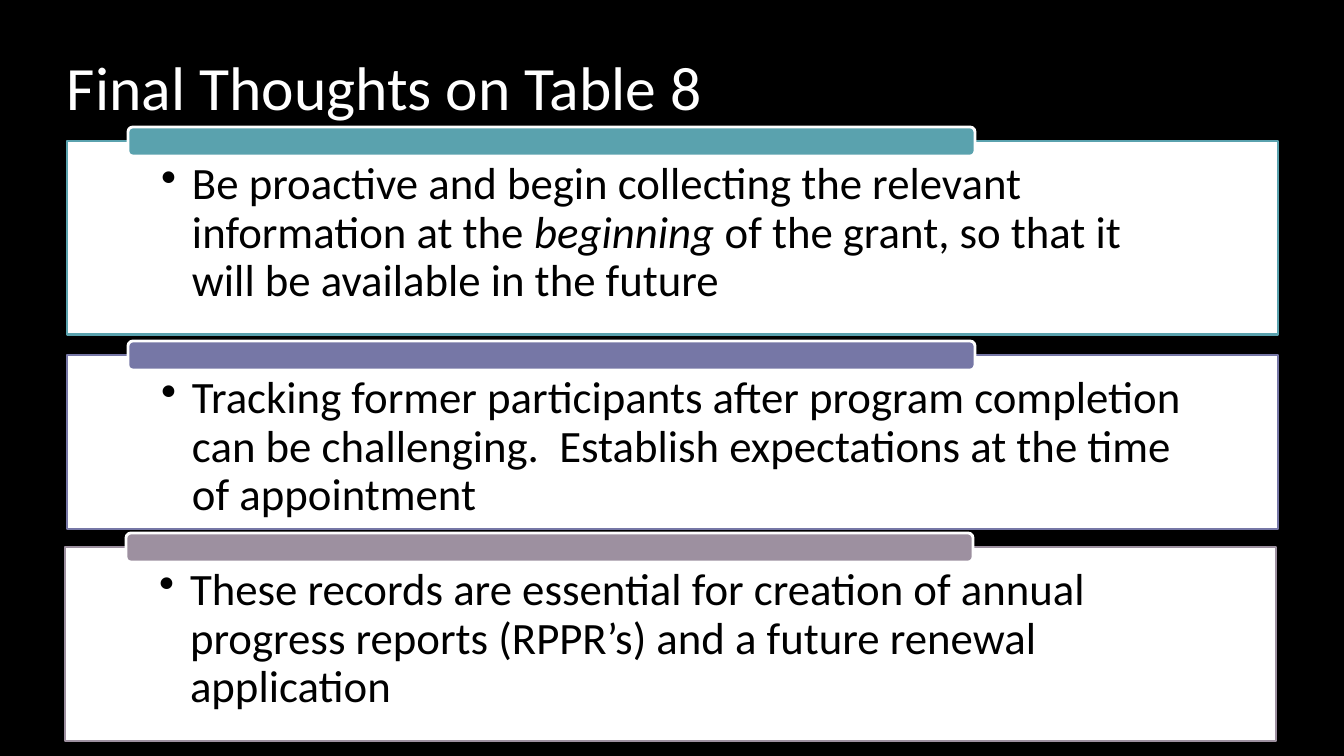
"""Build the closing slide on Table 8 with three bulleted panels."""
from lxml.etree import SubElement
from pptx import Presentation
from pptx.dml.color import RGBColor
from pptx.enum.shapes import MSO_SHAPE as Shape
from pptx.enum.text import MSO_ANCHOR as Anchor, MSO_AUTO_SIZE as AutoSize, PP_ALIGN as Align
from pptx.oxml.ns import qn
from pptx.util import Pt

TITLE = "Final Thoughts on Table 8"
PANELS = [
    {"left": 67, "top": 141, "height": 194, "accent": "teal", "runs": [
        ("Be proactive and begin collecting the relevant information at the ", False),
        ("beginning", True),
        (" of the grant, so that it will be available in the future", False)]},
    {"left": 67, "top": 355, "height": 174, "accent": "violet", "runs": [
        ("Tracking former participants after program completion can be challenging.  "
         "Establish expectations at the time of appointment", False)]},
    {"left": 65, "top": 547, "height": 194, "accent": "mauve", "runs": [
        ("These records are essential for creation of annual progress reports (RPPR’s) "
         "and a future renewal application", False)]},
]
COLORS = {"black": "000000", "white": "FFFFFF", "teal": "5AA2AE",
          "violet": "7677A6", "mauve": "9D90A0"}
FONT = "Calibri"
PANEL_WIDTH = 1211
BAR_WIDTH, BAR_HEIGHT = 847, 29
BAR_INDENT, BAR_RISE = 61, 14
BULLET_INDENT = 31


def px(length):
    return round(length * 914400 / 100.8)


def color(name):
    return RGBColor.from_string(COLORS[name])


def set_insets(frame, left, top, right, bottom):
    frame.margin_left, frame.margin_top = px(left), px(top)
    frame.margin_right, frame.margin_bottom = px(right), px(bottom)


def style_run(run, size, color_name):
    run.font.name = FONT
    run.font.size = Pt(size)
    run.font.color.rgb = color(color_name)


def add_block(slide, preset, box, fill, line):
    shape = slide.shapes.add_shape(preset, *map(px, box))
    shape.shadow.inherit = False
    shape.fill.solid()
    shape.fill.fore_color.rgb = color(fill)
    shape.line.color.rgb = color(line)
    shape.line.width = Pt(2)
    return shape


def add_title(slide):
    title = slide.shapes.title
    title.left, title.top, title.width, title.height = map(px, (67, 17, 1210, 106))
    frame = title.text_frame
    frame.text = TITLE
    frame.word_wrap = True
    frame.auto_size = AutoSize.NONE
    frame.vertical_anchor = Anchor.BOTTOM
    set_insets(frame, 0, 0, 0, 0)
    paragraph = frame.paragraphs[0]
    paragraph.alignment = Align.LEFT
    paragraph.line_spacing = Pt(28)
    style_run(paragraph.runs[0], 44, "white")


def add_bullet(paragraph):
    properties = paragraph._p.get_or_add_pPr()
    properties.set("marL", str(px(BULLET_INDENT)))
    properties.set("indent", str(-px(BULLET_INDENT)))
    SubElement(properties, qn("a:buChar"), char="•")


def add_panel(slide, panel):
    left, top, accent = panel["left"], panel["top"], panel["accent"]
    box = (left, top, PANEL_WIDTH, panel["height"])
    frame = add_block(slide, Shape.RECTANGLE, box, "white", accent).text_frame
    frame.word_wrap = True
    frame.vertical_anchor = Anchor.TOP
    set_insets(frame, 94, 20, 94, 25)
    paragraph = frame.paragraphs[0]
    paragraph.level = 1
    paragraph.alignment = Align.LEFT
    paragraph.line_spacing = 0.9
    add_bullet(paragraph)
    for text, italic in panel["runs"]:
        run = paragraph.add_run()
        run.text = text
        run.font.italic = italic
        style_run(run, 32, "black")
    bar = (left + BAR_INDENT, top - BAR_RISE, BAR_WIDTH, BAR_HEIGHT)
    add_block(slide, Shape.ROUNDED_RECTANGLE, bar, accent, "white")


def main():
    presentation = Presentation()
    presentation.slide_width, presentation.slide_height = px(1344), px(756)
    slide = presentation.slides.add_slide(presentation.slide_layouts[5])
    slide.background.fill.solid()
    slide.background.fill.fore_color.rgb = color("black")
    add_title(slide)
    for panel in PANELS:
        add_panel(slide, panel)
    presentation.save("out.pptx")


if __name__ == "__main__":
    main()
